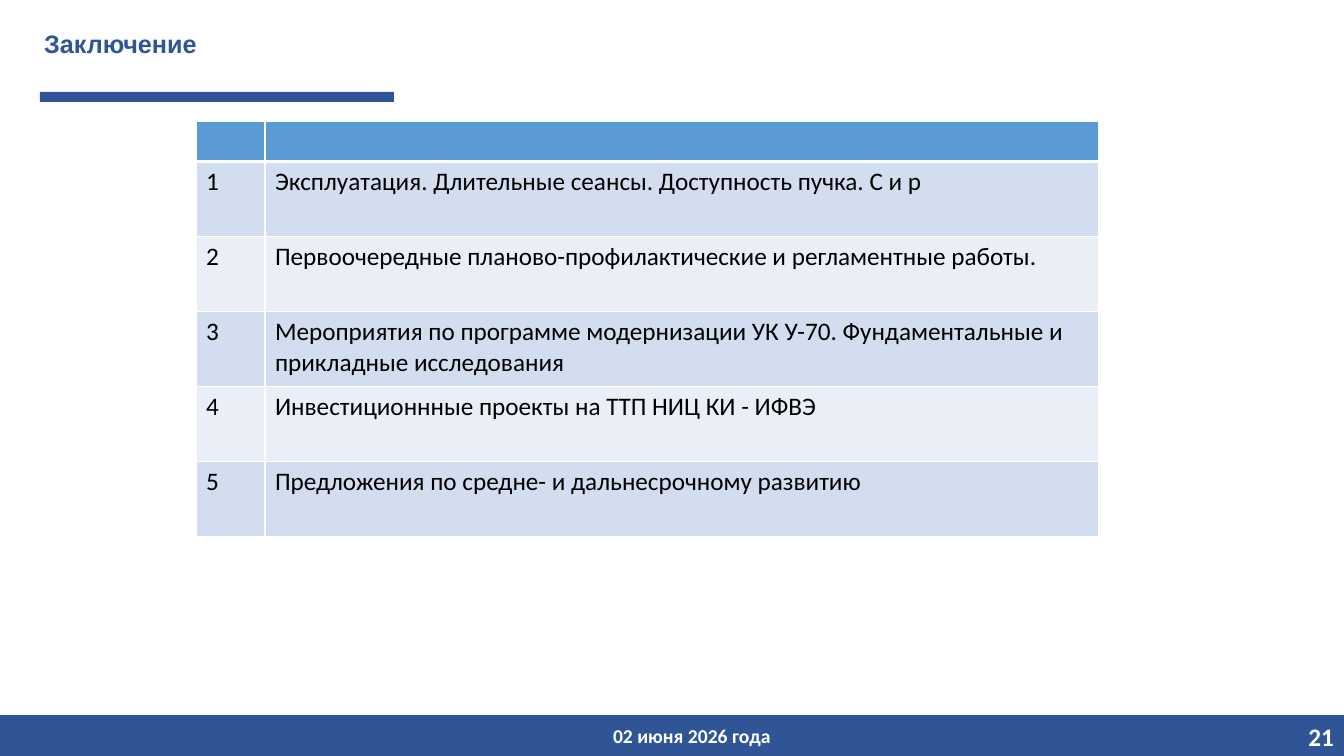
from lxml.etree import SubElement
from pptx import Presentation
from pptx.dml.color import RGBColor
from pptx.enum.shapes import MSO_SHAPE
from pptx.enum.text import MSO_ANCHOR, PP_ALIGN
from pptx.oxml.ns import qn
from pptx.util import Pt

TITLE = "Заключение"
DATE = "02 июня 2026 года"
PAGE_NUMBER = "21"
CONCLUSIONS = [
    "Эксплуатация. Длительные сеансы. Доступность пучка. C и p",
    "Первоочередные планово-профилактические и регламентные работы.",
    "Мероприятия по программе модернизации УК У-70. Фундаментальные и прикладные исследования",
    "Инвестиционнные проекты на ТТП НИЦ КИ - ИФВЭ",
    "Предложения по средне- и дальнесрочному развитию",
]

NAVY, WHITE, BLACK = "2F5597", "FFFFFF", "000000"
HEADER_FILL = "5B9BD5"
BAND_FILLS = ["D2DEEF", "EAEFF7"]

# Lengths in px: left, top, width, height
SLIDE_SIZE = (1344, 756)
TITLE_BOX = (34, 0, 935, 90)
TITLE_RULE = (40, 92, 354, 10)
FOOTER_BAND = (0, 715, 1344, 41)
DATE_BOX = (127, 716, 1130, 40)
NUMBER_BOX = (1257, 716, 87, 40)
TABLE_ORIGIN = (196, 121)
COLUMN_WIDTHS = [69, 834]
HEADER_HEIGHT, ROW_HEIGHT = 40, 75
EMU_PER_PX = 914400 / 100.8


def emu(*lengths):
    return [round(length * EMU_PER_PX) for length in lengths]


def color(hex_string):
    return RGBColor.from_string(hex_string)


def write(text_frame, text, size=18, font="Calibri", fill=BLACK, bold=False,
          align=PP_ALIGN.LEFT, anchor=MSO_ANCHOR.MIDDLE, line_spacing=None):
    text_frame.word_wrap = True
    text_frame.vertical_anchor = anchor
    paragraph = text_frame.paragraphs[0]
    paragraph.alignment = align
    paragraph.line_spacing = line_spacing
    run = paragraph.add_run()
    run.text = text
    run.font.size = Pt(size)
    run.font.name = font
    run.font.bold = bold
    run.font.color.rgb = color(fill)


def add_bar(slide, box):
    shape = slide.shapes.add_shape(MSO_SHAPE.RECTANGLE, *emu(*box))
    shape.shadow.inherit = False
    shape.fill.solid()
    shape.fill.fore_color.rgb = color(NAVY)
    shape.line.fill.background()


def style_cell(cell, fill, top=1, bottom=1):
    """Fill the cell and give it white borders, widths in points."""
    properties = cell._tc.get_or_add_tcPr()
    for side, width in (("L", 1), ("R", 1), ("T", top), ("B", bottom)):
        border = SubElement(properties, qn(f"a:ln{side}"), w=str(Pt(width)))
        solid = SubElement(border, qn("a:solidFill"))
        SubElement(solid, qn("a:srgbClr"), val=WHITE)
    cell.fill.solid()
    cell.fill.fore_color.rgb = color(fill)


def add_conclusions(slide):
    heights = [HEADER_HEIGHT] + [ROW_HEIGHT] * len(CONCLUSIONS)
    frame = slide.shapes.add_table(
        len(heights), len(COLUMN_WIDTHS),
        *emu(*TABLE_ORIGIN, sum(COLUMN_WIDTHS), sum(heights)))
    table = frame.table
    for column, width in zip(table.columns, emu(*COLUMN_WIDTHS)):
        column.width = width
    for row, height in zip(table.rows, emu(*heights)):
        row.height = height
    for cell in table.rows[0].cells:
        style_cell(cell, HEADER_FILL, bottom=3)
    for number, conclusion in enumerate(CONCLUSIONS, start=1):
        for column, text in enumerate((str(number), conclusion)):
            cell = table.cell(number, column)
            style_cell(cell, BAND_FILLS[(number - 1) % 2], top=3 if number == 1 else 1)
            write(cell.text_frame, text, anchor=MSO_ANCHOR.TOP)


def main():
    presentation = Presentation()
    presentation.slide_width, presentation.slide_height = emu(*SLIDE_SIZE)
    slide = presentation.slides.add_slide(presentation.slide_layouts[5])

    add_bar(slide, FOOTER_BAND)
    add_bar(slide, TITLE_RULE)

    title = slide.shapes.title
    title.left, title.top, title.width, title.height = emu(*TITLE_BOX)
    write(title.text_frame, TITLE, font="Arial", fill=NAVY, bold=True, line_spacing=0.9)

    for box, text, size, align in (
        (DATE_BOX, DATE, 14, PP_ALIGN.CENTER),
        (NUMBER_BOX, PAGE_NUMBER, 18, PP_ALIGN.RIGHT),
    ):
        text_box = slide.shapes.add_textbox(*emu(*box))
        write(text_box.text_frame, text, size=size, fill=WHITE, bold=True, align=align)

    add_conclusions(slide)
    presentation.save("out.pptx")


if __name__ == "__main__":
    main()
